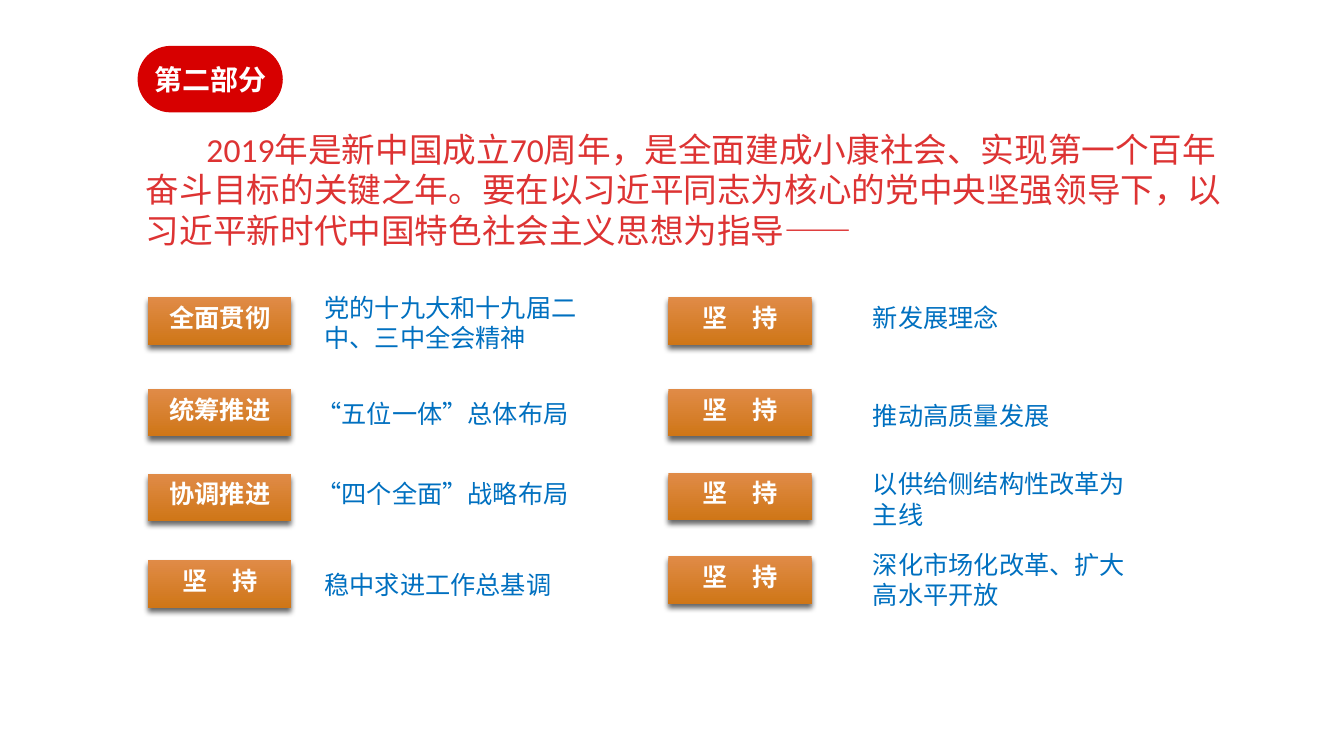
"""Build the slide on the guiding principles of part two."""
from lxml.etree import SubElement
from pptx import Presentation
from pptx.dml.color import RGBColor
from pptx.enum.lang import MSO_LANGUAGE_ID
from pptx.enum.shapes import MSO_SHAPE
from pptx.enum.text import MSO_ANCHOR, MSO_AUTO_SIZE, PP_ALIGN
from pptx.oxml.ns import qn
from pptx.util import Inches, Pt

NOTO = "Noto Sans CJK SC"
PART = "第二部分"
INTRO = ("2019年是新中国成立70周年，是全面建成小康社会、实现第一个百年奋斗目标的关键之年。"
         "要在以习近平同志为核心的党中央坚强领导下，以习近平新时代中国特色社会主义思想为指导——")
HOLD = "坚　持"

# tag text, tag top, note text, note left, note top, note height
COLS = {
    1.47: [
        ("全面贯彻", 2.95, "党的十九大和十九届二中、三中全会精神", 3.12, 2.85, 0.71),
        ("统筹推进", 3.86, "“五位一体”总体布局", 3.04, 3.9, 0.4),
        ("协调推进", 4.7, "“四个全面”战略布局", 3.04, 4.7, 0.4),
        (HOLD, 5.56, "稳中求进工作总基调", 3.12, 5.6, 0.4),
    ],
    6.63: [
        (HOLD, 2.95, "新发展理念", 8.56, 2.95, 0.4),
        (HOLD, 3.86, "推动高质量发展", 8.56, 3.92, 0.4),
        (HOLD, 4.69, "以供给侧结构性改革为主线", 8.56, 4.6, 0.71),
        (HOLD, 5.52, "深化市场化改革、扩大高水平开放", 8.56, 5.4, 0.71),
    ],
}


def paint(color, code):
    color.rgb = RGBColor.from_string(code)


def write(frame, text, size, face, code, bold=False):
    frame.word_wrap = True
    para = frame.paragraphs[0]
    run = para.add_run()
    run.text = text
    font = run.font
    font.size, font.name, font.bold = Pt(size), face, bold
    font.language_id = MSO_LANGUAGE_ID.SIMPLIFIED_CHINESE
    paint(font.color, code)
    SubElement(font._element, qn("a:ea"), typeface=NOTO)
    return para


def add_box(slide, area, text, size, face, code):
    box = slide.shapes.add_textbox(*map(Inches, area))
    para = write(box.text_frame, text, size, face, code)
    box.text_frame.auto_size = MSO_AUTO_SIZE.SHAPE_TO_FIT_TEXT
    return para


def add_label(slide, kind, area, text, size, face):
    shape = slide.shapes.add_shape(kind, *map(Inches, area))
    shape.shadow.inherit = False
    para = write(shape.text_frame, text, size, face, "FFFFFF", True)
    para.alignment = PP_ALIGN.CENTER
    return shape


def add_pill(slide):
    pill = add_label(slide, MSO_SHAPE.ROUNDED_RECTANGLE,
                     (1.37, 0.46, 1.43, 0.65), PART, 20, NOTO)
    pill.adjustments[0] = 0.5
    pill.fill.solid()
    paint(pill.fill.fore_color, "D70000")
    paint(pill.line.color, "D70000")
    pill.line.width = Pt(0.75)
    frame = pill.text_frame
    frame.vertical_anchor = MSO_ANCHOR.MIDDLE
    frame.margin_left = frame.margin_right = 0
    frame.margin_top = frame.margin_bottom = 0


def add_tag(slide, left, top, text):
    tag = add_label(slide, MSO_SHAPE.RECTANGLE,
                    (left, top, 1.42, 0.47), text, 18, "Quicksand")
    tag.text_frame.vertical_anchor = MSO_ANCHOR.TOP
    tag.line.fill.background()
    tag.fill.gradient()
    tag.fill.gradient_angle = 270
    for stop, place, code in zip(tag.fill.gradient_stops, (0, 1), ("E08B47", "CF7617")):
        stop.position = place
        paint(stop.color, code)
    effects = tag._element.spPr.find(qn("a:effectLst"))
    shade = SubElement(effects, qn("a:outerShdw"), blurRad=str(Pt(4)),
                       dist=str(Pt(3)), dir="5400000", rotWithShape="0")
    black = SubElement(shade, qn("a:srgbClr"), val="000000")
    SubElement(black, qn("a:alpha"), val="60000")


def main():
    deck = Presentation()
    deck.slide_width, deck.slide_height = Inches(13.33), Inches(7.5)
    slide = deck.slides.add_slide(deck.slide_layouts[6])
    add_pill(slide)
    intro = add_box(slide, (1.35, 1.23, 11.06, 1.31), INTRO, 24, "Calibri", "DD3333")
    intro._p.get_or_add_pPr().set("indent", str(Inches(0.6)))
    for left, rows in COLS.items():
        for tag, top, note, start, level, high in rows:
            add_tag(slide, left, top, tag)
            add_box(slide, (start, level, 2.91, high), note, 18, NOTO, "0070C0")
    deck.save("out.pptx")


if __name__ == "__main__":
    main()
